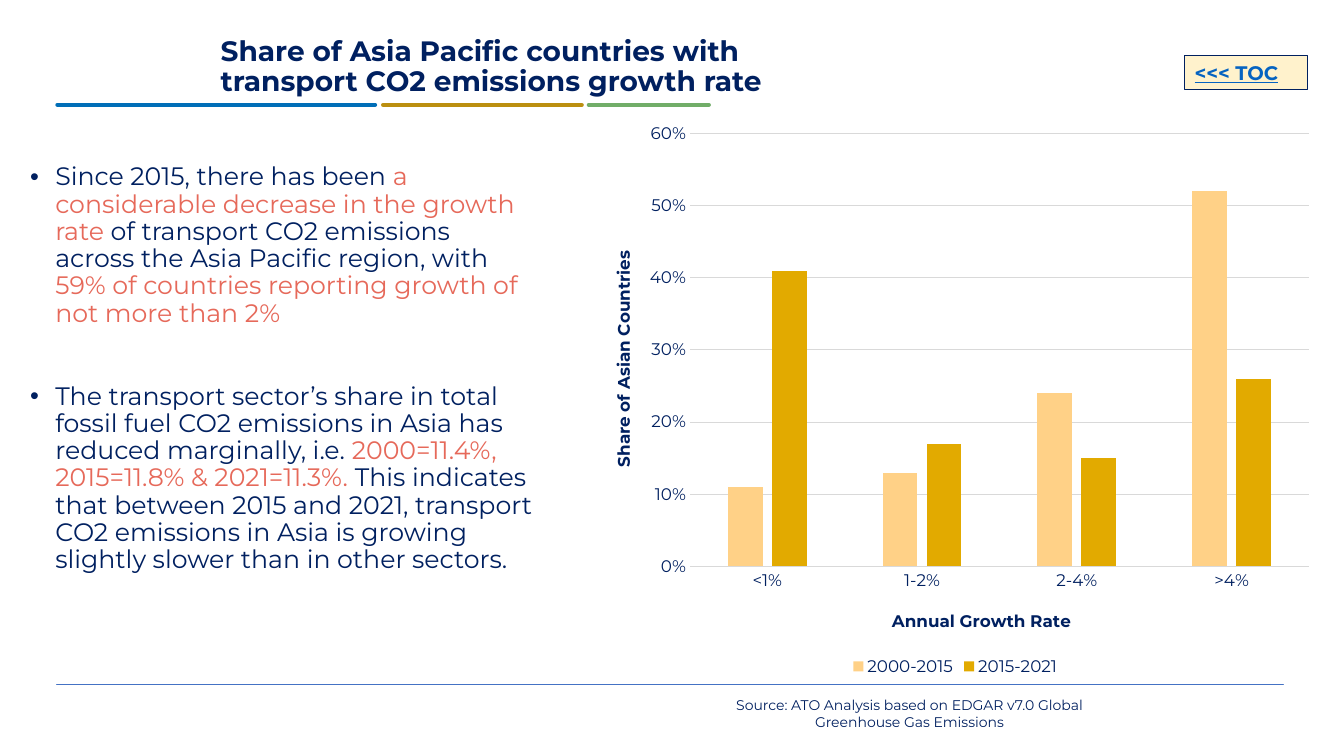
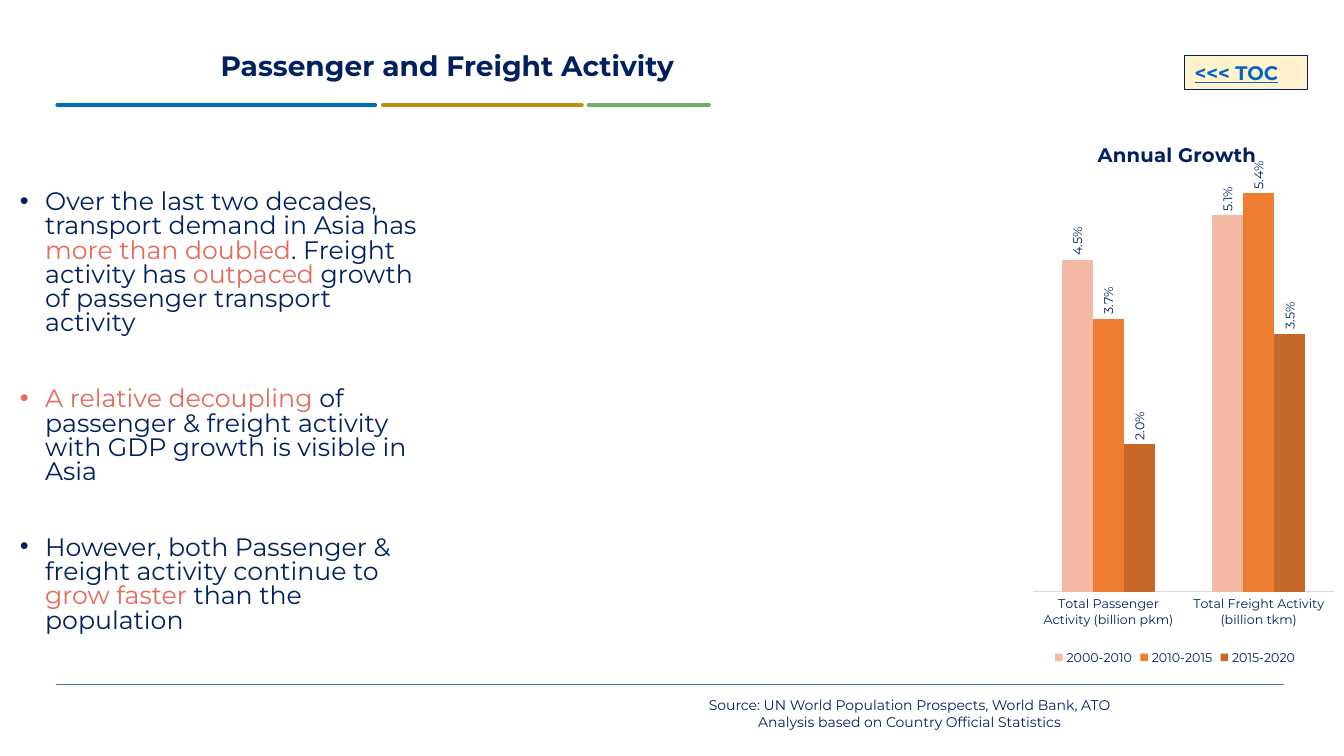
from lxml import etree
from pptx import Presentation
from pptx.chart.data import CategoryChartData
from pptx.dml.color import RGBColor
from pptx.enum.chart import XL_CHART_TYPE, XL_LABEL_POSITION, XL_LEGEND_POSITION, XL_TICK_MARK
from pptx.enum.shapes import MSO_CONNECTOR, MSO_SHAPE
from pptx.enum.text import MSO_ANCHOR, PP_ALIGN
from pptx.oxml.ns import qn
from pptx.util import Pt

COLUMNS = XL_CHART_TYPE.COLUMN_CLUSTERED
OUTSIDE = XL_LABEL_POSITION.OUTSIDE_END
BOTTOM = XL_LEGEND_POSITION.BOTTOM
NO_TICK = XL_TICK_MARK.NONE
STRAIGHT = MSO_CONNECTOR.STRAIGHT
RECTANGLE = MSO_SHAPE.RECTANGLE
TOP, MIDDLE = MSO_ANCHOR.TOP, MSO_ANCHOR.MIDDLE
LEFT, CENTER = PP_ALIGN.LEFT, PP_ALIGN.CENTER

SCALE = 9144  # EMU in one px, 100 px to the inch
PAGE_SIZE = (1333, 750)
FONT = "Montserrat"
NAVY, CORAL, GRID = "002060", "E6695A", "D9D9D9"
LINK, CREAM = "0563C1", "FFF2CC"

# left, right, y, colour, width in points
RULES = [
    (57, 372, 104, "006EB7", 3),
    (380, 577, 104, "BB8F10", 3),
    (584, 703, 104, "71AD68", 3),
    (56, 1273, 679, "4472C4", 0.5),
]
TITLE_BOX = (209, 24, 596, 86)
SOURCE_BOX = (677, 688, 450, 40)
TOC_BOX = (1175, 55, 122, 34)


def px(*lengths):
    return [length * SCALE for length in lengths]


def rgb(value):
    return RGBColor.from_string(value)


def style_font(font, size, color=None, bold=False):
    font.name, font.size, font.bold = FONT, Pt(size), bold
    if color:
        font.color.rgb = rgb(color)


# Text
def add_text(page, box, text, size, bold=False, align=LEFT, line_spacing=1.0):
    frame = page.shapes.add_textbox(*px(*box)).text_frame
    frame.word_wrap = True
    frame.vertical_anchor = MIDDLE
    para = frame.paragraphs[0]
    para.text = text
    para.alignment = align
    para.line_spacing = line_spacing
    style_font(para.font, size, NAVY, bold)


def add_bullets(page, box, items, line_spacing, gap):
    """Each item is a list of (text, colour) spans."""
    frame = page.shapes.add_textbox(*px(*box)).text_frame
    frame.word_wrap = True
    frame.vertical_anchor = TOP
    for index, spans in enumerate(items):
        para = frame.add_paragraph() if index else frame.paragraphs[0]
        para.line_spacing = line_spacing
        para.space_before = Pt(gap if index else 0)
        properties = para._p.get_or_add_pPr()
        properties.set("marL", str(25 * SCALE))
        properties.set("indent", str(-25 * SCALE))
        etree.SubElement(properties, qn("a:buFont")).set("typeface", "Arial")
        etree.SubElement(properties, qn("a:buChar")).set("char", "•")
        style_font(para.font, 18)
        for text, color in spans:
            span = para.add_run()
            span.text = text
            span.font.color.rgb = rgb(color)


# Shared parts of a page
def add_rule(page, left, right, y, color, width):
    rule = page.shapes.add_connector(STRAIGHT, *px(left, y, right, y))
    rule.line.color.rgb = rgb(color)
    rule.line.width = Pt(width)
    rule.element.xpath(".//a:ln")[0].set("cap", "rnd")
    etree.SubElement(rule.element.spPr, qn("a:effectLst"))


def add_toc_button(page, box):
    button = page.shapes.add_shape(RECTANGLE, *px(*box))
    button.shadow.inherit = False
    button.fill.solid()
    button.fill.fore_color.rgb = rgb(CREAM)
    button.line.color.rgb = rgb(NAVY)
    button.line.width = Pt(0.75)
    button.text_frame.vertical_anchor = MIDDLE
    para = button.text_frame.paragraphs[0]
    para.text = "<<< TOC"
    para.alignment = LEFT
    style_font(para.font, 14, LINK, True)
    para.font.underline = True


def add_page(deck, title, source):
    page = deck.slides.add_slide(deck.slide_layouts[6])
    for rule in RULES:
        add_rule(page, *rule)
    add_text(page, TITLE_BOX, title, 20, bold=True, line_spacing=0.9)
    add_text(page, SOURCE_BOX, source, 10, align=CENTER)
    add_toc_button(page, TOC_BOX)
    return page


# Charts
def place_part(chart, query, inner=False, **fractions):
    """Fix the position of a title or plot area as fractions of the chart."""
    part = chart._chartSpace.xpath(query)[0]
    for old in part.findall(qn("c:layout")):
        part.remove(old)
    layout = etree.Element(qn("c:layout"))
    manual = etree.SubElement(layout, qn("c:manualLayout"))
    settings = {"xMode": "edge", "yMode": "edge", **fractions}
    if inner:
        settings = {"layoutTarget": "inner", **settings}
    for name, value in settings.items():
        etree.SubElement(manual, qn("c:" + name)).set("val", str(value))
    part.insert(0 if inner else 1, layout)


def turn_text(chart, query):
    for body in chart._chartSpace.xpath(query + "//a:bodyPr"):
        body.set("rot", "-5400000")
        body.set("vert", "horz")


def set_title(owner, text, size):
    """Title a chart or an axis."""
    owner.has_title = True
    title = owner.chart_title if hasattr(owner, "chart_title") else owner.axis_title
    para = title.text_frame.paragraphs[0]
    para.text = text
    style_font(para.font, size, NAVY, True)


def add_columns(page, box, categories, series, size, gap, overlap, top, number_format):
    """Each series is (name, colour, values)."""
    data = CategoryChartData(number_format=number_format)
    data.categories = categories
    for name, _, values in series:
        data.add_series(name, values)
    chart = page.shapes.add_chart(COLUMNS, *px(*box), data).chart
    style_font(chart.font, size, NAVY)
    chart.has_title = False
    chart.has_legend = True
    chart.legend.position = BOTTOM
    chart.legend.include_in_layout = False
    style_font(chart.legend.font, size, NAVY)

    plot = chart.plots[0]
    plot.vary_by_categories = False
    plot.gap_width, plot.overlap = gap, overlap
    for column, (_, color, _) in zip(plot.series, series):
        column.format.fill.solid()
        column.format.fill.fore_color.rgb = rgb(color)

    for axis in (chart.category_axis, chart.value_axis):
        axis.major_tick_mark = axis.minor_tick_mark = NO_TICK
        style_font(axis.tick_labels.font, size, NAVY)
    chart.category_axis.format.line.color.rgb = rgb(GRID)
    chart.category_axis.format.line.width = Pt(0.75)
    chart.value_axis.format.line.fill.background()
    chart.value_axis.minimum_scale, chart.value_axis.maximum_scale = 0, top
    return chart


def add_share_chart(page, box):
    chart = add_columns(
        page, box, ["<1%", "1-2%", "2-4%", ">4%"],
        [("2000-2015", "FFD187", (0.11, 0.13, 0.24, 0.52)),
         ("2015-2021", "E2AA00", (0.41, 0.17, 0.15, 0.26))],
        size=12, gap=219, overlap=-27, top=0.6, number_format="0%")
    axis = chart.value_axis
    axis.major_unit = 0.1
    axis.tick_labels.number_format = "0%"
    axis.tick_labels.number_format_is_linked = False
    axis.major_gridlines.format.line.color.rgb = rgb(GRID)
    axis.major_gridlines.format.line.width = Pt(0.75)
    set_title(axis, "Share of Asian Countries", 12)
    set_title(chart.category_axis, "Annual Growth Rate", 12)
    turn_text(chart, "//c:valAx/c:title")
    place_part(chart, "//c:valAx/c:title", x=0.03, y=0.24)
    place_part(chart, "//c:catAx/c:title", x=0.41, y=0.87)
    place_part(chart, "//c:plotArea", inner=True, x=0.14, y=0.04, w=0.84, h=0.76)


def add_growth_chart(page, box):
    chart = add_columns(
        page, box,
        ["Total Passenger Activity (billion pkm)", "Total Freight Activity (billion tkm)"],
        [("2000-2010", "F3B9A4", (0.045, 0.051)),
         ("2010-2015", "ED7D31", (0.037, 0.054)),
         ("2015-2020", "C56829", (0.02, 0.035))],
        size=9, gap=182, overlap=0, top=0.06, number_format="0.0%")
    chart.value_axis.visible = False
    chart.value_axis.has_major_gridlines = False
    set_title(chart, "Annual Growth", 14)
    for column in chart.plots[0].series:
        labels = column.data_labels
        labels.show_value = True
        labels.position = OUTSIDE
        labels.number_format, labels.number_format_is_linked = "0.0%", False
        style_font(labels.font, 9, NAVY)
    turn_text(chart, "//c:dLbls")
    place_part(chart, "c:chart/c:title", x=0.26, y=0.04)
    place_part(chart, "//c:plotArea", inner=True, x=0.08, y=0.06, w=0.89, h=0.8)


# Pages
def add_share_page(deck):
    page = add_page(
        deck, "Share of Asia Pacific countries with transport CO2 emissions growth rate",
        "Source: ATO Analysis based on EDGAR v7.0 Global Greenhouse Gas Emissions")
    add_share_chart(page, (582, 110, 731, 565))
    add_bullets(page, (20, 158, 521, 450), [
        [("Since 2015, there has been ", NAVY),
         ("a considerable decrease in the growth rate", CORAL),
         (" of transport CO2 emissions across the Asia Pacific region, with ", NAVY),
         ("59% of countries reporting growth of not more than 2%", CORAL)],
        [("The transport sector’s share in total fossil fuel CO2 emissions in Asia "
          "has reduced marginally, i.e. ", NAVY),
         ("2000=11.4%,  2015=11.8% & 2021=11.3%. ", CORAL),
         ("This indicates that between 2015 and 2021, transport CO2 emissions in Asia "
          "is growing slightly slower than in other sectors.", NAVY)],
    ], line_spacing=0.9, gap=40)


def add_activity_page(deck):
    page = add_page(
        deck, "Passenger and Freight Activity",
        "Source: UN World Population Prospects, World Bank, ATO Analysis based on "
        "Country Official Statistics")
    add_growth_chart(page, (998, 115, 335, 549))
    add_bullets(page, (10, 185, 414, 450), [
        [("Over the last two decades, transport demand in Asia has ", NAVY),
         ("more than doubled", CORAL),
         (". Freight activity has ", NAVY),
         ("outpaced", CORAL),
         (" growth of passenger transport activity", NAVY)],
        [("A relative decoupling", CORAL),
         (" of passenger & freight activity with GDP growth is visible in Asia", NAVY)],
        [("However, both Passenger & freight activity continue to ", NAVY),
         ("grow faster", CORAL),
         (" than the population", NAVY)],
    ], line_spacing=0.8, gap=37)


def main():
    deck = Presentation()
    deck.slide_width, deck.slide_height = px(*PAGE_SIZE)
    add_share_page(deck)
    add_activity_page(deck)
    deck.save("out.pptx")


if __name__ == "__main__":
    main()
